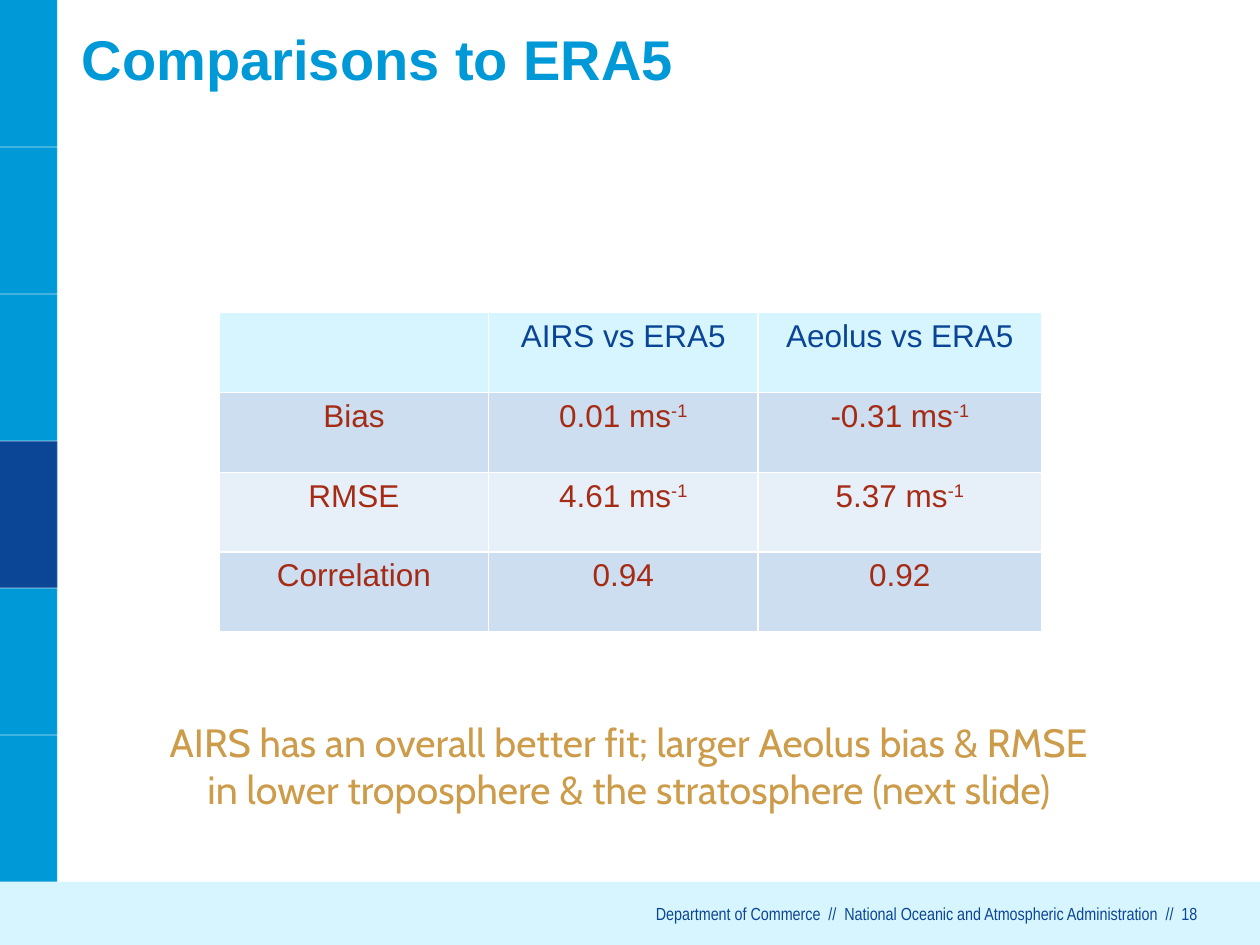
from lxml.etree import SubElement
from pptx import Presentation
from pptx.dml.color import RGBColor
from pptx.enum.shapes import MSO_CONNECTOR, MSO_SHAPE
from pptx.enum.text import MSO_ANCHOR, PP_ALIGN
from pptx.oxml.ns import qn
from pptx.util import Cm, Pt

WIDTH, HEIGHT = 25.4, 19.05
SIDEBAR_WIDTH = 1.16
BAND_TOP = 17.78
BLOCK_HEIGHT = BAND_TOP / 6

BLUE, NAVY, PALE = "0099D8", "0B4596", "D6F5FF"
HEADER_TEXT, BODY_TEXT, GOLD = "0A4595", "A52B15", "CC9C4A"
ROW_FILLS = [PALE, "CCDEF0", "E7EFF8", "CCDEF0"]
COLUMN_WIDTHS = [5.43, 5.43, 5.72]
ROW_HEIGHT = 1.61
UNIT = " ms"
ROWS = [
    ["", "AIRS vs ERA5", "Aeolus vs ERA5"],
    ["Bias", "0.01 ms", "-0.31 ms"],
    ["RMSE", "4.61 ms", "5.37 ms"],
    ["Correlation", "0.94", "0.92"],
]


def color(value):
    return RGBColor.from_string(value)


def style_paragraph(paragraph, name, size, value, alignment, bold=False):
    paragraph.alignment = alignment
    paragraph.font.name = name
    paragraph.font.size = Pt(size)
    paragraph.font.bold = bold
    paragraph.font.color.rgb = color(value)


def clear_margins(frame):
    frame.margin_left = frame.margin_right = 0
    frame.margin_top = frame.margin_bottom = 0


def add_block(slide, left, top, width, height, fill):
    shape = slide.shapes.add_shape(
        MSO_SHAPE.RECTANGLE, Cm(left), Cm(top), Cm(width), Cm(height))
    shape.shadow.inherit = False
    shape.fill.solid()
    shape.fill.fore_color.rgb = color(fill)
    shape.line.fill.background()


def add_divider(slide, start_x, start_y, end_x, end_y):
    connector = slide.shapes.add_connector(
        MSO_CONNECTOR.STRAIGHT, Cm(start_x), Cm(start_y), Cm(end_x), Cm(end_y))
    connector.line.width = Pt(0.75)
    connector.line.color.rgb = color("FFFFFF")
    properties = connector._element.spPr
    fill_color = properties.find(".//" + qn("a:srgbClr"))
    SubElement(fill_color, qn("a:alpha"), val="40000")
    SubElement(properties, qn("a:effectLst"))


def add_text(slide, left, top, width, height, text):
    box = slide.shapes.add_textbox(Cm(left), Cm(top), Cm(width), Cm(height))
    box.text_frame.word_wrap = True
    box.text_frame.text = text
    return box.text_frame


def add_sidebar(slide):
    add_block(slide, 0, 0, SIDEBAR_WIDTH, HEIGHT, BLUE)
    add_block(slide, 0, 3 * BLOCK_HEIGHT, SIDEBAR_WIDTH, BLOCK_HEIGHT, NAVY)
    for index in range(1, 7):
        top = index * BLOCK_HEIGHT
        add_divider(slide, 0, top, SIDEBAR_WIDTH, top)
    add_divider(slide, SIDEBAR_WIDTH, 0, SIDEBAR_WIDTH, HEIGHT)


def add_footer(slide):
    add_block(slide, 0, BAND_TOP, WIDTH, HEIGHT - BAND_TOP, PALE)
    frame = add_text(
        slide, 4.01, 18.21, 20.12, 0.43,
        "Department of Commerce  //  National Oceanic and Atmospheric Administration  //  18")
    clear_margins(frame)
    style_paragraph(frame.paragraphs[0], "Arial Narrow", 10, NAVY, PP_ALIGN.RIGHT)


def set_title(slide):
    title = slide.shapes.title
    title.left, title.top = Cm(1.65), Cm(-0.03)
    title.width, title.height = Cm(20.45), Cm(2.39)
    frame = title.text_frame
    frame.text = "Comparisons to ERA5"
    frame.vertical_anchor = MSO_ANCHOR.MIDDLE
    clear_margins(frame)
    style_paragraph(frame.paragraphs[0], "Arial", 32, BLUE, PP_ALIGN.LEFT, True)


def set_borders(cell):
    properties = cell._tc.get_or_add_tcPr()
    for side in ("a:lnL", "a:lnR", "a:lnT", "a:lnB"):
        line = SubElement(properties, qn(side), w=str(Pt(1)))
        fill = SubElement(line, qn("a:solidFill"))
        SubElement(fill, qn("a:srgbClr"), val="FFFFFF")


def fill_cell(cell, text, fill, text_color):
    set_borders(cell)
    cell.fill.solid()
    cell.fill.fore_color.rgb = color(fill)
    paragraph = cell.text_frame.paragraphs[0]
    style_paragraph(paragraph, "Arial", 18, text_color, PP_ALIGN.CENTER)
    if text:
        paragraph.add_run().text = text
    if text.endswith(UNIT):
        exponent = paragraph.add_run()
        exponent.text = "-1"
        exponent.font._element.set("baseline", "30000")


def add_comparison_table(slide):
    table = slide.shapes.add_table(
        len(ROWS), len(COLUMN_WIDTHS), Cm(4.42), Cm(6.3),
        Cm(sum(COLUMN_WIDTHS)), Cm(ROW_HEIGHT * len(ROWS))).table
    for column, width in zip(table.columns, COLUMN_WIDTHS):
        column.width = Cm(width)
    for row_index, (texts, fill) in enumerate(zip(ROWS, ROW_FILLS)):
        table.rows[row_index].height = Cm(ROW_HEIGHT)
        text_color = BODY_TEXT if row_index else HEADER_TEXT
        for column_index, text in enumerate(texts):
            fill_cell(table.cell(row_index, column_index), text, fill, text_color)


def add_conclusion(slide):
    frame = add_text(
        slide, 2.87, 14.35, 19.63, 2.18,
        "AIRS has an overall better fit; larger Aeolus bias & RMSE "
        "in lower troposphere & the stratosphere (next slide)")
    style_paragraph(frame.paragraphs[0], "Cabin", 22.5, GOLD, PP_ALIGN.CENTER)


def main():
    presentation = Presentation()
    presentation.slide_width, presentation.slide_height = Cm(WIDTH), Cm(HEIGHT)
    slide = presentation.slides.add_slide(presentation.slide_layouts[5])
    add_sidebar(slide)
    add_footer(slide)
    add_comparison_table(slide)
    add_conclusion(slide)
    set_title(slide)
    presentation.save("out.pptx")


if __name__ == "__main__":
    main()
